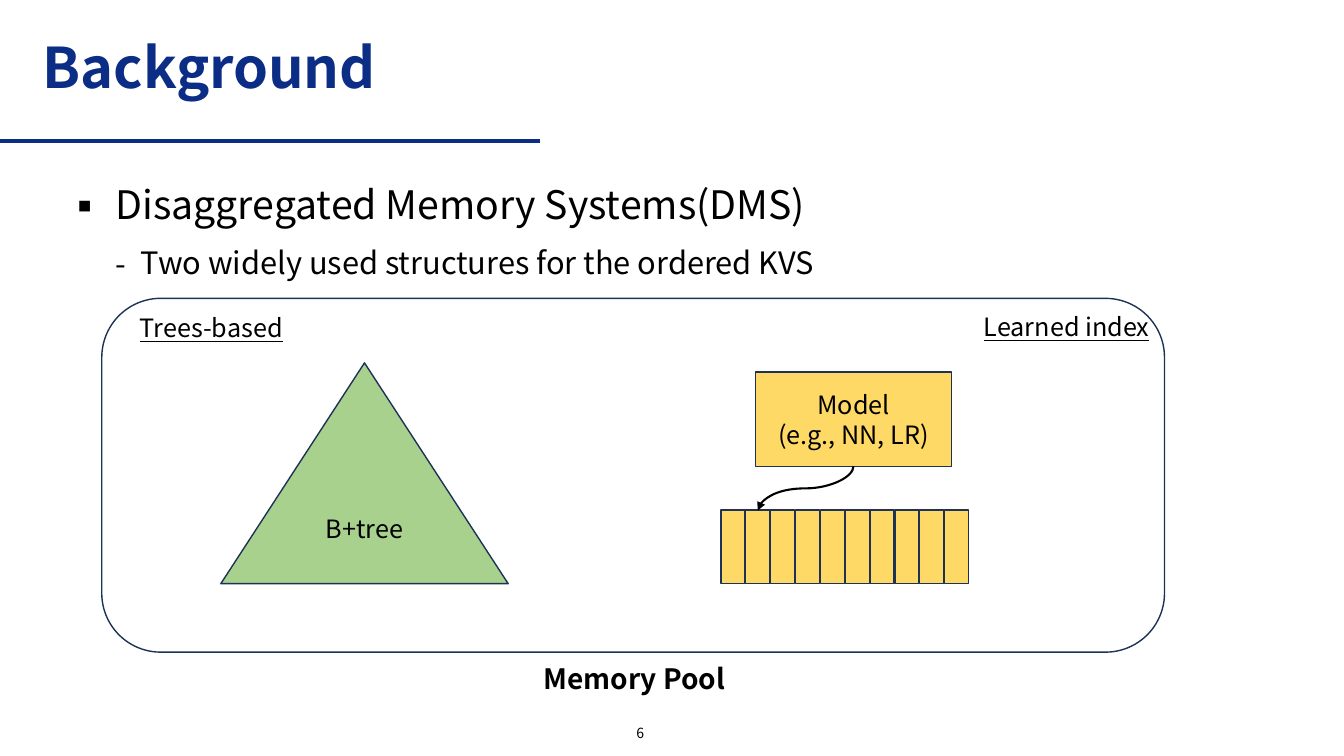
"""Build the Background slide on index structures for disaggregated memory."""
from dataclasses import dataclass

from lxml.etree import SubElement
from pptx import Presentation
from pptx.dml.color import RGBColor
from pptx.enum.shapes import MSO_CONNECTOR, MSO_SHAPE
from pptx.enum.text import MSO_ANCHOR, MSO_AUTO_SIZE, PP_ALIGN
from pptx.oxml.ns import qn
from pptx.util import Inches, Pt

FONT = "Noto Sans CJK KR"
COLOURS = {
    "navy": "0B2D86",
    "outline": "1E3256",
    "green": "A9D18E",
    "yellow": "FFD966",
    "black": "000000",
}


@dataclass(frozen=True)
class Area:
    """A place on the slide, in inches."""

    left: float
    top: float
    width: float
    height: float

    def lengths(self) -> tuple:
        """Return the left, top, width and height as lengths."""
        return tuple(map(Inches, (self.left, self.top, self.width, self.height)))


@dataclass(frozen=True)
class Style:
    """The look of a line of text."""

    size: float = 18
    colour: str = "black"
    bold: bool = False
    underline: bool = False
    align: PP_ALIGN = PP_ALIGN.LEFT


@dataclass(frozen=True)
class Label:
    """A text box holding one line."""

    text: str
    area: Area
    style: Style
    anchor: MSO_ANCHOR = MSO_ANCHOR.TOP


@dataclass(frozen=True)
class Figure:
    """An outlined shape with optional fill and centred lines."""

    kind: MSO_SHAPE
    area: Area
    fill: str = ""
    lines: tuple = ()


@dataclass(frozen=True)
class Bullet:
    """A bulleted line with its indent in inches."""

    text: str
    mark: str
    level: int
    margin: float
    hanging: float
    size: float


CENTRED = Style(align=PP_ALIGN.CENTER)
HEADING = Style(underline=True)
TITLE = Label("Background", Area(0.32, 0.24, 9.71, 0.91),
              Style(40, "navy", bold=True), MSO_ANCHOR.MIDDLE)
BODY_AREA = Area(0.55, 1.65, 12.14, 5.26)
BULLETS = (
    Bullet("Disaggregated Memory Systems(DMS)", "▪", 0, 0.5, 0.5, 28),
    Bullet("Two widely used structures for the ordered KVS", "-", 1, 0.75, 0.25, 22),
)
FIGURES = (
    Figure(MSO_SHAPE.ROUNDED_RECTANGLE, Area(1.01, 2.96, 10.54, 3.51)),
    Figure(MSO_SHAPE.ISOSCELES_TRIANGLE, Area(2.19, 3.6, 2.85, 2.19), "green", ("B+tree",)),
    Figure(MSO_SHAPE.RECTANGLE, Area(7.49, 3.69, 1.95, 0.94), "yellow",
           ("Model", "(e.g., NN, LR)")),
)
LABELS = (
    Label("Memory Pool", Area(5.29, 6.51, 2.47, 0.44), Style(20, bold=True)),
    Label("Learned index", Area(9.66, 3.04, 1.9, 0.4), HEADING),
    Label("Trees-based", Area(1.29, 3.05, 1.9, 0.4), HEADING),
    Label("6", Area(4.85, 7.11, 3, 0.32), Style(10, align=PP_ALIGN.CENTER), MSO_ANCHOR.MIDDLE),
)
CELL_COUNT = 10
CELL_PITCH = 0.2465
FIRST_CELL = Area(7.15, 5.06, 0.24, 0.73)
ARROW_AREA = Area(7.77, 4.37, 0.44, 0.95)


def colour(name: str) -> RGBColor:
    """Look up a named colour."""
    return RGBColor.from_string(COLOURS[name])


def write(paragraph, text: str, style: Style) -> None:
    """Add one styled run to a paragraph."""
    paragraph.alignment = style.align
    run = paragraph.add_run()
    run.text = text
    run.font.name = FONT
    run.font.size = Pt(style.size)
    run.font.bold = style.bold
    run.font.underline = style.underline
    run.font.color.rgb = colour(style.colour)


def fill_label(shape, label: Label) -> None:
    """Put the label's text into a shape."""
    frame = shape.text_frame
    frame.word_wrap = True
    frame.auto_size = MSO_AUTO_SIZE.NONE
    frame.vertical_anchor = label.anchor
    write(frame.paragraphs[0], label.text, label.style)


def add_title(slide) -> None:
    """Move and fill the title placeholder."""
    title = slide.shapes.title
    title.left, title.top, title.width, title.height = TITLE.area.lengths()
    fill_label(title, TITLE)
    title.text_frame.paragraphs[0].line_spacing = 0.9


def add_bullets(slide) -> None:
    """Add the bulleted body text."""
    frame = slide.shapes.add_textbox(*BODY_AREA.lengths()).text_frame
    frame.word_wrap = True
    for index, bullet in enumerate(BULLETS):
        paragraph = frame.add_paragraph() if index else frame.paragraphs[0]
        paragraph.level = bullet.level
        paragraph.line_spacing = 1.2
        paragraph.space_before = Pt(6 if index else 0)
        properties = paragraph._p.get_or_add_pPr()
        properties.set("marL", str(Inches(bullet.margin)))
        properties.set("indent", str(-Inches(bullet.hanging)))
        SubElement(properties, qn("a:buFont"), typeface=FONT)
        SubElement(properties, qn("a:buChar"), char=bullet.mark)
        write(paragraph, bullet.text, Style(bullet.size))


def add_figure(shapes, figure: Figure) -> None:
    """Draw an outlined shape and its lines of text."""
    shape = shapes.add_shape(figure.kind, *figure.area.lengths())
    shape.shadow.inherit = False
    shape.line.color.rgb = colour("outline")
    shape.line.width = Pt(1)
    if figure.fill:
        shape.fill.solid()
        shape.fill.fore_color.rgb = colour(figure.fill)
    else:
        shape.fill.background()
    frame = shape.text_frame
    frame.vertical_anchor = MSO_ANCHOR.MIDDLE
    for index, line in enumerate(figure.lines):
        write(frame.add_paragraph() if index else frame.paragraphs[0], line, CENTRED)


def add_line(slide, kind: MSO_CONNECTOR, area: Area, colour_name: str, width: float):
    """Draw a connector across an area and return it."""
    left, top, across, down = area.lengths()
    connector = slide.shapes.add_connector(kind, left, top, left + across, top + down)
    connector.line.color.rgb = colour(colour_name)
    connector.line.width = Pt(width)
    SubElement(connector._element.spPr, qn("a:effectLst"))
    return connector


def main() -> None:
    """Build and save the slide."""
    presentation = Presentation()
    presentation.slide_width, presentation.slide_height = Inches(13.33), Inches(7.5)
    slide = presentation.slides.add_slide(presentation.slide_layouts[5])
    add_line(slide, MSO_CONNECTOR.STRAIGHT, Area(0, 1.4, 5.36, 0), "navy", 3)
    add_title(slide)
    add_bullets(slide)
    for figure in FIGURES:
        add_figure(slide.shapes, figure)
    for label in LABELS:
        fill_label(slide.shapes.add_textbox(*label.area.lengths()), label)
    cells = slide.shapes.add_group_shape()
    for index in range(CELL_COUNT):
        area = Area(FIRST_CELL.left + index * CELL_PITCH, FIRST_CELL.top,
                    FIRST_CELL.width, FIRST_CELL.height)
        add_figure(cells.shapes, Figure(MSO_SHAPE.RECTANGLE, area, "yellow"))
    arrow = add_line(slide, MSO_CONNECTOR.CURVE, ARROW_AREA, "black", 1.5)
    arrow._element.spPr.find(qn("a:xfrm")).set("rot", str(90 * 60000))
    SubElement(arrow.line._get_or_add_ln(), qn("a:tailEnd"), type="triangle")
    presentation.save("out.pptx")


if __name__ == "__main__":
    main()
